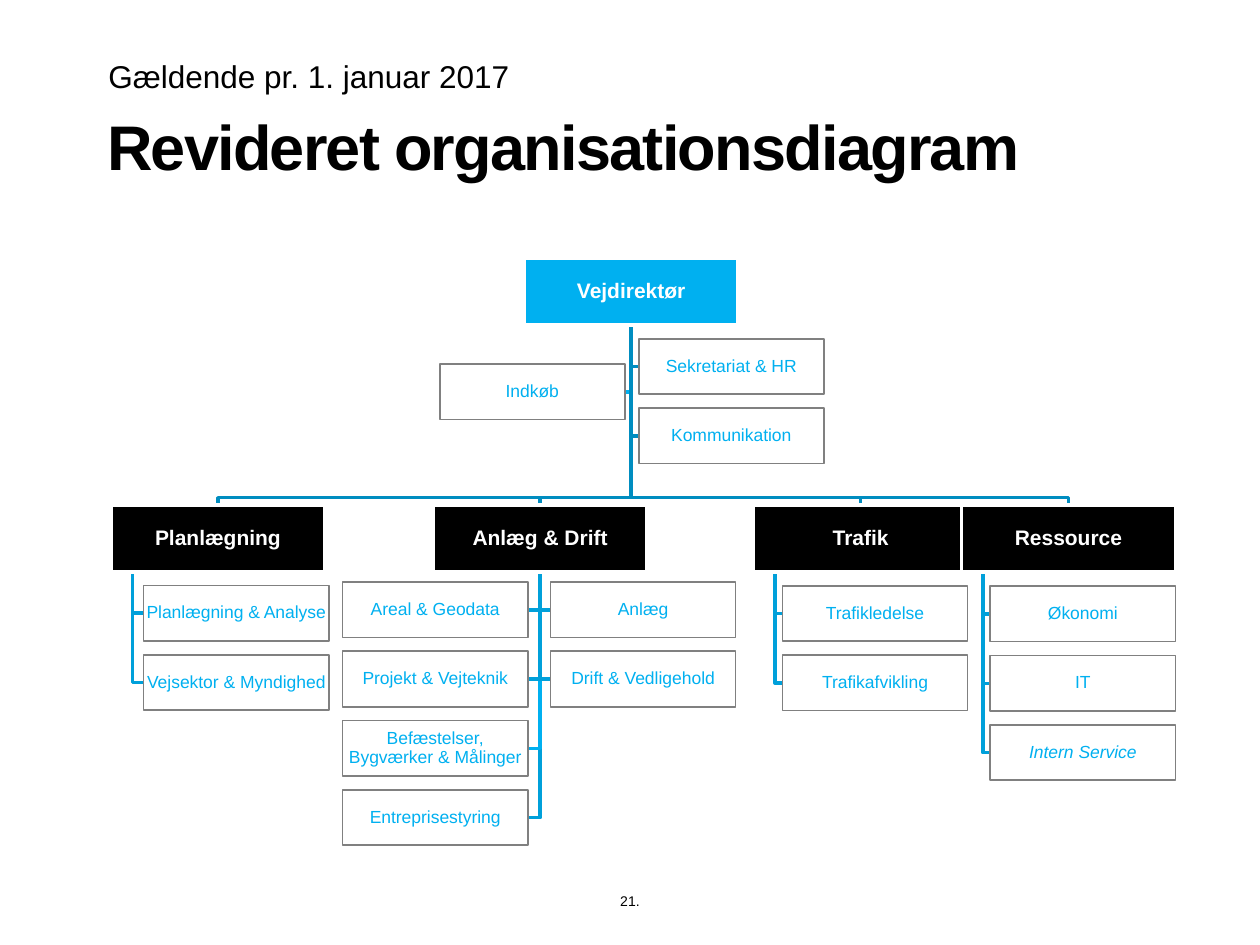
from pptx import Presentation
from pptx.dml.color import RGBColor
from pptx.enum.shapes import MSO_SHAPE as SHAPE
from pptx.enum.text import MSO_ANCHOR as ANCHOR, MSO_AUTO_SIZE as FIT, PP_ALIGN as ALIGN
from pptx.util import Pt

BLACK = RGBColor(0, 0, 0)
WHITE = RGBColor(255, 255, 255)
GREY = RGBColor(0x80, 0x80, 0x80)
CYAN = RGBColor(0x00, 0xB0, 0xF0)
BLUE = RGBColor(0x00, 0xA0, 0xDA)
DEEP = RGBColor(0x00, 0x8D, 0xC0)

HEAD_W, HEAD_H = 122.4, 38.2
LEAF_W, LEAF_H, STEP = 105.8, 31.7, 39.6
TOP_Y, ROW_Y, BUS_Y = 147.6, 288.6, 284.4
STEM = 360.7

prs = Presentation()
prs.slide_width, prs.slide_height = Pt(720), Pt(540)
slide = prs.slides.add_slide(prs.slide_layouts[5])
shapes = slide.shapes


def write(shape, text, size, color, align=ALIGN.CENTER, anchor=ANCHOR.MIDDLE, gap=1, inset=0):
    """Put one formatted run in the shape and return the run."""
    frame = shape.text_frame
    frame.word_wrap = True
    frame.auto_size = FIT.NONE
    frame.vertical_anchor = anchor
    frame.margin_left = frame.margin_right = Pt(inset)
    frame.margin_top = frame.margin_bottom = Pt(inset)
    par = frame.paragraphs[0]
    par.alignment, par.line_spacing = align, gap
    run = par.add_run()
    run.text = text
    font = run.font
    font.name, font.size, font.color.rgb = "Arial", Pt(size), color
    return run


def trace(points, color):
    """Draw an open line through the points."""
    (x, y), *rest = [(Pt(a), Pt(b)) for a, b in points]
    build = shapes.build_freeform(x, y)
    build.add_line_segments(rest, close=False)
    line = build.convert_to_shape()
    line.shadow.inherit = False
    line.fill.background()
    line.line.color.rgb, line.line.width = color, Pt(2)


# Heading, subheading and page number
title = shapes.title
title.left, title.top, title.width, title.height = Pt(61.2), Pt(54.7), Pt(596.2), Pt(49.7)
run = write(title, "Revideret organisationsdiagram", 36, BLACK, ALIGN.LEFT, ANCHOR.BOTTOM, 1.03)
run.font.bold = True
run._r.get_or_add_rPr().set("spc", "-100")

date = shapes.add_textbox(Pt(61.9), Pt(20.2), Pt(594), Pt(33.8))
write(date, "Gældende pr. 1. januar 2017", 18, BLACK, ALIGN.LEFT, ANCHOR.BOTTOM, 1.02)
page = shapes.add_textbox(Pt(348.5), Pt(500.4), Pt(23), Pt(28.8))
write(page, "21.", 8, BLACK)

# Units: name, left, top, fill, line colour, trunk x, groups of (left, top, names)
units = [
    ("Vejdirektør", 299.5, TOP_Y, CYAN, DEEP, STEM, [
        (251.3, 208.1, ["Indkøb"]),
        (365, 193.7, ["Sekretariat & HR", "Kommunikation"])]),
    ("Planlægning", 63.4, ROW_Y, BLACK, BLUE, 75.6, [
        (82.1, 334.6, ["Planlægning & Analyse", "Vejsektor & Myndighed"])]),
    ("Anlæg & Drift", 247.5, ROW_Y, BLACK, BLUE, 308.7, [
        (195.8, 332.6, ["Areal & Geodata", "Projekt & Vejteknik",
                        "Befæstelser, Bygværker & Målinger", "Entreprisestyring"]),
        (314.6, 332.6, ["Anlæg", "Drift & Vedligehold"])]),
    ("Trafik", 430.6, ROW_Y, BLACK, BLUE, 442.8, [
        (447.1, 334.8, ["Trafikledelse", "Trafikafvikling"])]),
    ("Ressource", 549.4, ROW_Y, BLACK, BLUE, 561.6, [
        (565.9, 335, ["Økonomi", "IT", "Intern Service"])]),
]
BRIGHT = {"Indkøb", "Befæstelser, Bygværker & Målinger"}

# Lines from the director to each unit
for name, left, *_ in units[1:]:
    mid = left + HEAD_W / 2
    trace([(STEM, TOP_Y + HEAD_H), (STEM, BUS_Y), (mid, BUS_Y), (mid, ROW_Y)], DEEP)

for name, left, top, fill, color, trunk, groups in units:
    # Longest line first, so that shorter ones lie on top of it
    for x, y, leaves in groups:
        edge = x if x > trunk else x + LEAF_W
        for i, leaf in reversed(list(enumerate(leaves))):
            leaf_y = y + i * STEP
            mid = leaf_y + LEAF_H / 2
            tint = CYAN if leaf in BRIGHT else color
            trace([(trunk, top + HEAD_H), (trunk, mid), (edge, mid)], tint)
            box = shapes.add_shape(SHAPE.RECTANGLE, Pt(x), Pt(leaf_y), Pt(LEAF_W), Pt(LEAF_H))
            box.shadow.inherit = False
            box.fill.solid()
            box.fill.fore_color.rgb = WHITE
            box.line.color.rgb, box.line.width = GREY, Pt(1)
            run = write(box, leaf, 10, CYAN, gap=0.9, inset=0.7)
            if leaf == "Intern Service":
                run.font.italic = True

    head = shapes.add_shape(SHAPE.RECTANGLE, Pt(left), Pt(top), Pt(HEAD_W), Pt(HEAD_H))
    head.shadow.inherit = False
    head.fill.solid()
    head.fill.fore_color.rgb = fill
    head.line.color.rgb, head.line.width = WHITE, Pt(2)
    write(head, name, 12, WHITE, gap=0.9, inset=0.7).font.bold = True

prs.save("out.pptx")
